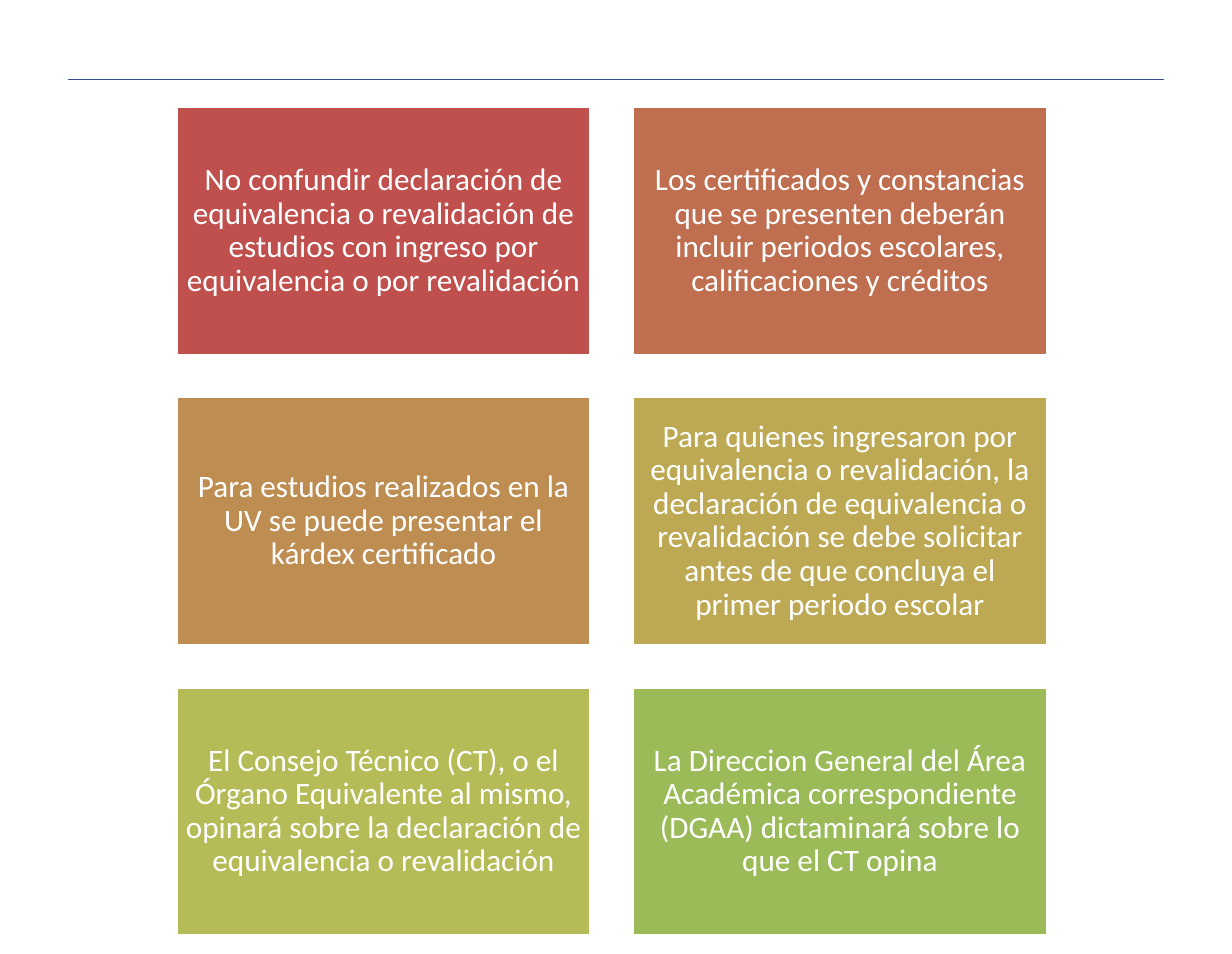
"""Build a slide of six coloured notes on equivalence and revalidation of studies."""
import lxml.etree
import pptx
import pptx.dml.color
import pptx.enum.shapes
import pptx.enum.text
import pptx.oxml.ns
import pptx.util

Cm = pptx.util.Cm
Pt = pptx.util.Pt

NOTES = [
    ("C0504D", "No confundir declaración de equivalencia o revalidación de estudios "
               "con ingreso por equivalencia o por revalidación"),
    ("BF6F4F", "Los certificados y constancias que se presenten deberán incluir "
               "periodos escolares, calificaciones y créditos"),
    ("BE8D52", "Para estudios realizados en la UV se puede presentar el kárdex certificado"),
    ("BDA954", "Para quienes ingresaron por equivalencia o revalidación, la declaración "
               "de equivalencia o revalidación se debe solicitar antes de que concluya "
               "el primer periodo escolar"),
    ("B5BC57", "El Consejo Técnico (CT), o el Órgano Equivalente al mismo, opinará sobre "
               "la declaración de equivalencia o revalidación"),
    ("9BBB59", "La Direccion General del Área Académica correspondiente (DGAA) "
               "dictaminará sobre lo que el CT opina"),
]
COLUMNS = 2
GRID_LEFT, GRID_TOP = 3.99, 2.41
NOTE_WIDTH, NOTE_HEIGHT = 9.4, 5.64
GAP = 0.94


def color(value):
    """Turn a hex string into an RGB colour."""
    return pptx.dml.color.RGBColor.from_string(value)


class NoteSlide:
    """Hold the style and the current slide."""

    font_name = "Calibri"
    font_size = 20
    light = "FFFFFF"
    rule_color = "364F9D"
    inset = 0.2

    def __init__(self, slide):
        """Keep the slide to draw on."""
        self.slide = slide

    def rule(self, left, right, top):
        """Draw the thin horizontal header line."""
        header_rule = self.slide.shapes.add_connector(
            pptx.enum.shapes.MSO_CONNECTOR.STRAIGHT, Cm(left), Cm(top), Cm(right), Cm(top))
        header_rule.line.color.rgb = color(self.rule_color)
        header_rule.line.width = Pt(0.75)
        lxml.etree.SubElement(
            header_rule._element.spPr, pptx.oxml.ns.qn("a:effectLst"))

    def note(self, left, top, fill, text):
        """Draw one filled rectangle with centred text."""
        note = self.slide.shapes.add_shape(
            pptx.enum.shapes.MSO_SHAPE.RECTANGLE,
            Cm(left), Cm(top), Cm(NOTE_WIDTH), Cm(NOTE_HEIGHT))
        note.shadow.inherit = False
        note.fill.solid()
        note.fill.fore_color.rgb = color(fill)
        note.line.color.rgb = color(self.light)
        note.line.width = Pt(2)
        frame = note.text_frame
        frame.word_wrap = True
        frame.vertical_anchor = pptx.enum.text.MSO_ANCHOR.MIDDLE
        frame.margin_left = frame.margin_right = Cm(self.inset)
        frame.margin_top = frame.margin_bottom = Cm(self.inset)
        frame.text = text
        paragraph = frame.paragraphs[0]
        paragraph.alignment = pptx.enum.text.PP_ALIGN.CENTER
        paragraph.line_spacing = 0.9
        paragraph.space_after = Pt(7)
        font = paragraph.runs[0].font
        font.name = self.font_name
        font.size = Pt(self.font_size)
        font.color.rgb = color(self.light)


def main():
    """Lay out the header line and the grid of notes."""
    presentation = pptx.Presentation()
    presentation.slide_width = Cm(27.91)
    presentation.slide_height = Cm(21.62)
    page = NoteSlide(presentation.slides.add_slide(presentation.slide_layouts[6]))
    page.rule(1.55, 26.37, 1.8)
    for index, (fill, text) in enumerate(NOTES):
        row, column = divmod(index, COLUMNS)
        page.note(GRID_LEFT + column * (NOTE_WIDTH + GAP),
                  GRID_TOP + row * (NOTE_HEIGHT + GAP), fill, text)
    presentation.save("out.pptx")


if __name__ == "__main__":
    main()
